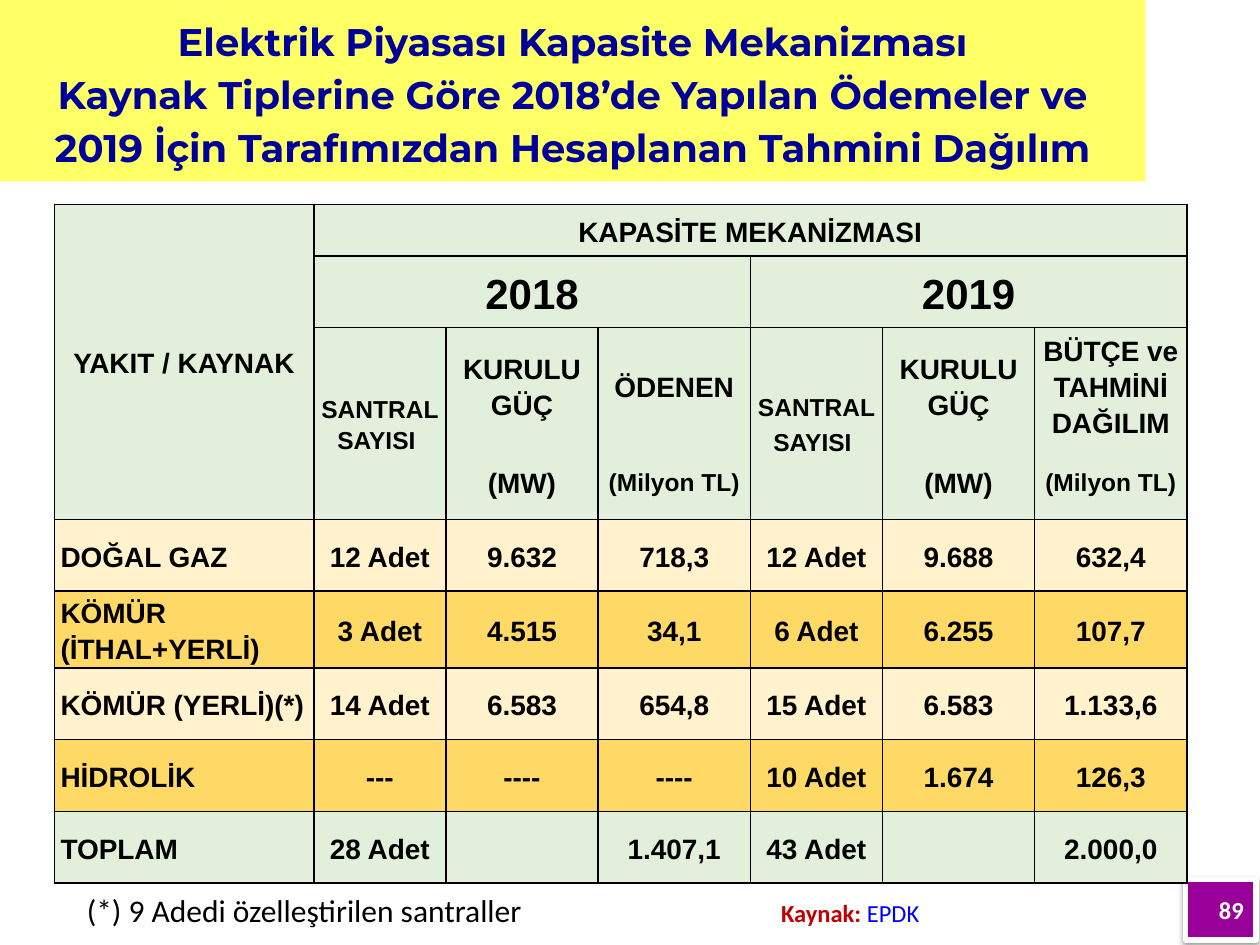
from lxml import etree
from pptx import Presentation
from pptx.dml.color import RGBColor
from pptx.enum.shapes import MSO_SHAPE as Shape
from pptx.enum.text import MSO_ANCHOR as Anchor, MSO_AUTO_SIZE as AutoSize, PP_ALIGN as Align
from pptx.oxml import parse_xml
from pptx.oxml.ns import nsdecls, qn
from pptx.util import Pt

GREEN, CREAM, AMBER = "E2EFDA", "FFF2CC", "FFD966"


def colour(value):
    return RGBColor.from_string(value)


def style(font, name, size, value, bold=False):
    font.name, font.size, font.bold = name, Pt(size), bold
    font.color.rgb = colour(value)


deck = Presentation()
deck.slide_width, deck.slide_height = Pt(720), Pt(540)
page = deck.slides.add_slide(deck.slide_layouts[5])

# Title band
title = page.shapes.title
title.left, title.top, title.width, title.height = Pt(0), Pt(0), Pt(654.5), Pt(103.7)
title.fill.solid()
title.fill.fore_color.rgb = colour("FFFF66")
frame = title.text_frame
frame.text = ("Elektrik Piyasası Kapasite Mekanizması\n"
              "Kaynak Tiplerine Göre 2018’de Yapılan Ödemeler ve "
              "2019 İçin Tarafımızdan Hesaplanan Tahmini Dağılım")
frame.word_wrap, frame.auto_size = True, AutoSize.NONE
frame.vertical_anchor = Anchor.MIDDLE
for para in frame.paragraphs:
    para.alignment, para.line_spacing = Align.CENTER, 1.15
    style(para.font, "Montserrat", 22, "000099", True)

# Page number with its soft shadow
badge = page.shapes.add_shape(Shape.RECTANGLE, Pt(677.5), Pt(502.6), Pt(40.3), Pt(34.5))
badge.fill.solid()
badge.fill.fore_color.rgb = colour("990099")
badge.line.color.rgb = colour("FFFFFF")
badge.line.width = Pt(3)
badge.shadow.inherit = False
effects = badge.element.spPr.find(qn("a:effectLst"))
effects.append(parse_xml(
    f'<a:outerShdw {nsdecls("a")} blurRad="{Pt(3.1)}" dist="{Pt(1.6)}" dir="5400000" '
    'rotWithShape="0"><a:srgbClr val="000000"><a:alpha val="38000"/></a:srgbClr></a:outerShdw>'))
badge.text_frame.text = "89"
badge.text_frame.vertical_anchor = Anchor.MIDDLE
para = badge.text_frame.paragraphs[0]
para.alignment = Align.RIGHT
style(para.font, "Calibri", 14, "FFFFFF", True)

# Capacity table: None marks a cell covered by a merge
rows = [
    ["YAKIT / KAYNAK", "KAPASİTE MEKANİZMASI", None, None, None, None, None],
    [None, "2018", None, None, "2019", None, None],
    [None, "SANTRAL SAYISI ", "KURULU GÜÇ", "ÖDENEN",
     "SANTRAL SAYISI", "KURULU GÜÇ", "BÜTÇE ve TAHMİNİ DAĞILIM"],
    [None, None, "(MW)", "(Milyon TL)", None, "(MW)", "(Milyon TL)"],
    ["DOĞAL GAZ", "12 Adet", "9.632", "718,3", "12 Adet", "9.688", "632,4"],
    ["KÖMÜR (İTHAL+YERLİ)", "3 Adet", "4.515", "34,1", "6 Adet", "6.255", "107,7"],
    ["KÖMÜR (YERLİ)(*)", "14 Adet", "6.583", "654,8", "15 Adet", "6.583", "1.133,6"],
    ["HİDROLİK", "---", "----", "----", "10 Adet", "1.674", "126,3"],
    ["TOPLAM", "28 Adet", "", "1.407,1", "43 Adet", "", "2.000,0"],
]
row_fills = [GREEN] * 4 + [CREAM, AMBER, CREAM, AMBER, GREEN]
row_heights = [29.5, 41, 66, 43.5, 41, 44, 41, 41, 41]
column_widths = [148.3] + [75.5, 87, 87] * 2
sizes = {"2018": 24, "2019": 24, "SANTRAL SAYISI": 14, "(Milyon TL)": 14}
merges = [(0, 0, 3, 0), (0, 1, 0, 6), (1, 1, 1, 3), (1, 4, 1, 6), (2, 1, 3, 1), (2, 4, 3, 4)]

table = page.shapes.add_table(len(rows), len(column_widths), Pt(31), Pt(116.8),
                              Pt(sum(column_widths)), Pt(sum(row_heights))).table
for column, width in zip(table.columns, column_widths):
    column.width = Pt(width)
for row, height in zip(table.rows, row_heights):
    row.height = Pt(height)
for top, left, bottom, right in merges:
    table.cell(top, left).merge(table.cell(bottom, right))

for r, texts in enumerate(rows):
    for c, text in enumerate(texts):
        cell = table.cell(r, c)
        cell.fill.solid()
        cell.fill.fore_color.rgb = colour(row_fills[r])
        cell.vertical_anchor = Anchor.MIDDLE
        cell.margin_left = cell.margin_right = Pt(3.6)
        cell.margin_top = cell.margin_bottom = Pt(0)

        # Units sit under their headings with no line between
        open_edge = {2: "lnB", 3: "lnT"}.get(r) if c in (2, 3, 5, 6) else None
        properties = cell._tc.get_or_add_tcPr()
        for place, edge in enumerate(("lnL", "lnR", "lnT", "lnB")):
            line = etree.Element(qn(f"a:{edge}"), w=str(Pt(1)))
            if edge == open_edge:
                etree.SubElement(line, qn("a:noFill"))
            else:
                paint = etree.SubElement(line, qn("a:solidFill"))
                etree.SubElement(paint, qn("a:srgbClr"), val="000000")
            properties.insert(place, line)

        if text is None:
            continue
        para = cell.text_frame.paragraphs[0]
        if text:
            para.add_run().text = text
        para.line_spacing = 1.15
        para.alignment = Align.LEFT if c == 0 and r > 3 else Align.CENTER
        style(para.font, "Arial", sizes.get(text.strip(), 16), "000000", True)

# The 2019 plant heading ends in a larger space, which opens its second line
span = table.cell(2, 4).text_frame.paragraphs[0].add_run()
span.text = " "
span.font.size = Pt(16)

# Footnote and source
notes = [
    (42.5, 505.4, 296.6, 28.8, 18, [("(*) 9 Adedi özelleştirilen santraller", "000000", False)]),
    (439.2, 509.8, 164.2, 24.5, 14, [("Kaynak: ", "C00000", True), ("EPDK", "0000FF", False)]),
]
for left, top, width, height, size, spans in notes:
    box = page.shapes.add_textbox(Pt(left), Pt(top), Pt(width), Pt(height))
    box.text_frame.word_wrap = True
    box.text_frame.auto_size = AutoSize.SHAPE_TO_FIT_TEXT
    for text, value, bold in spans:
        span = box.text_frame.paragraphs[0].add_run()
        span.text = text
        style(span.font, "Calibri", size, value, bold)

deck.save("out.pptx")
